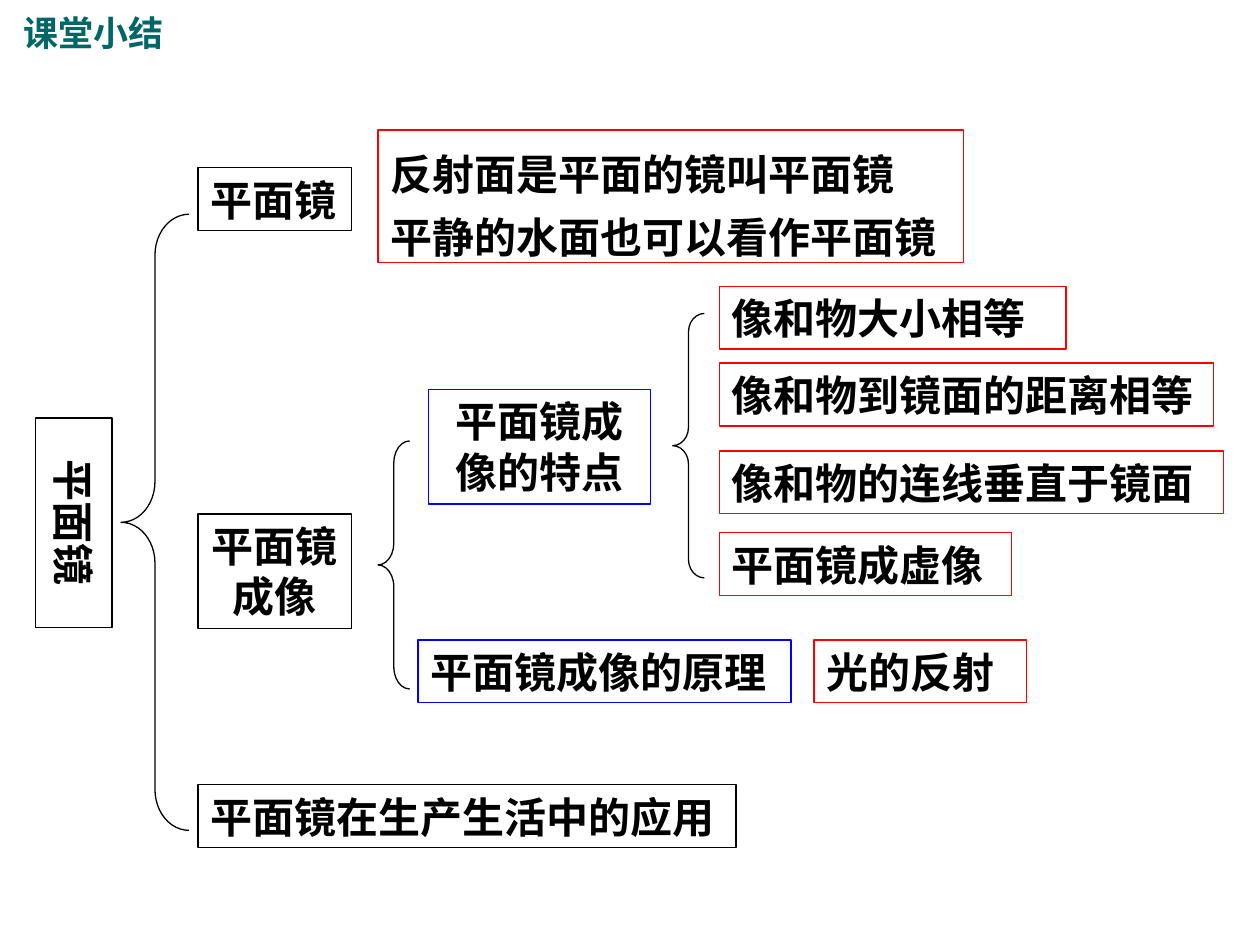
"""Build the lesson summary slide: a brace diagram about plane mirrors."""
from pptx import Presentation
from pptx.dml.color import RGBColor
from pptx.enum.shapes import MSO_SHAPE as Preset
from pptx.enum.text import MSO_ANCHOR as Anchor, MSO_AUTO_SIZE as AutoSize, PP_ALIGN as Align
from pptx.util import Cm, Pt

BLACK = RGBColor(0x00, 0x00, 0x00)
BLUE = RGBColor(0x00, 0x00, 0xFF)
RED = RGBColor(0xFF, 0x00, 0x00)
TEAL = RGBColor(0x00, 0x66, 0x66)

BRANCH_LEFT, FEATURE_LEFT = 3.99, 14.5
ONE_LINE, TWO_LINES = 1.27, 2.31
FRAME = dict(word_wrap=True, auto_size=AutoSize.SHAPE_TO_FIT_TEXT, vertical_anchor=Anchor.TOP,
             margin_left=Cm(0.25), margin_right=Cm(0.25),
             margin_top=Cm(0.13), margin_bottom=Cm(0.13))


def apply(target, values):
    for name, value in values.items():
        setattr(target, name, value)


def add_outline(preset, bounds, color):
    outline = slide.shapes.add_shape(preset, *map(Cm, bounds))
    outline.shadow.inherit = False
    outline.fill.background()
    outline.line.color.rgb = color
    outline.line.width = Pt(0.75)
    return outline


deck = Presentation()
deck.slide_width, deck.slide_height = Cm(25.4), Cm(19.05)
slide = deck.slides.add_slide(deck.slide_layouts[5])

heading = slide.shapes.title
apply(heading, dict(left=Cm(0.23), top=Cm(0.1), width=Cm(3.61), height=Cm(1.12)))
apply(heading.text_frame, FRAME)
heading.text_frame.text = "课堂小结"
heading_line = heading.text_frame.paragraphs[0]
heading_line.alignment = Align.LEFT
apply(heading_line.font, dict(name="Noto Sans CJK JP", size=Pt(20), bold=True))
heading_line.font.color.rgb = TEAL

braces = [
    ((2.44, 4.32, 1.37, 12.42), 0.6),
    ((7.62, 8.89, 0.64, 5.0), 0.69),
    ((13.56, 6.32, 0.64, 5.33), 0.58),
]
for bounds, curve in braces:
    brace = add_outline(Preset.LEFT_BRACE, bounds, BLACK)
    brace.adjustments[0] = curve
    brace.adjustments[1] = 0.5

topics = [
    ("平面镜", (0.71, 8.43, 1.55, 4.22), BLACK, "Arial", Align.CENTER),
    ("平面镜", (BRANCH_LEFT, 3.38, 3.1, ONE_LINE), BLACK, "Roboto", Align.LEFT),
    ("平面镜成像", (BRANCH_LEFT, 10.36, 3.1, TWO_LINES), BLACK, "Roboto", Align.CENTER),
    ("平面镜在生产生活中的应用", (BRANCH_LEFT, 15.82, 10.85, ONE_LINE), BLACK, "DejaVu Sans", Align.LEFT),
    ("反射面是平面的镜叫平面镜\n平静的水面也可以看作平面镜", (7.62, 2.62, 11.81, 2.67), RED, "Roboto", Align.LEFT),
    ("平面镜成像的特点", (8.64, 7.85, 4.47, TWO_LINES), BLUE, "Arial", Align.CENTER),
    ("平面镜成像的原理", (8.43, 12.9, 7.52, ONE_LINE), BLUE, "Arial", Align.LEFT),
    ("光的反射", (16.41, 12.9, 4.29, ONE_LINE), RED, "Roboto", Align.LEFT),
    ("像和物大小相等", (FEATURE_LEFT, 5.77, 6.99, ONE_LINE), RED, "Arial", Align.LEFT),
    ("像和物到镜面的距离相等", (FEATURE_LEFT, 7.32, 9.96, ONE_LINE), RED, "Arial", Align.LEFT),
    ("像和物的连线垂直于镜面", (FEATURE_LEFT, 9.09, 10.16, ONE_LINE), RED, "Arial", Align.LEFT),
    ("平面镜成虚像", (FEATURE_LEFT, 10.74, 5.89, ONE_LINE), RED, "Arial", Align.LEFT),
]
for wording, bounds, color, typeface, alignment in topics:
    topic = add_outline(Preset.RECTANGLE, bounds, color)
    apply(topic.text_frame, FRAME)
    topic.text_frame.text = wording
    if bounds[3] > bounds[2]:
        topic.text_frame._txBody.bodyPr.set("vert", "vert")
    for line in topic.text_frame.paragraphs:
        line.alignment = alignment
        line.line_spacing = 1.25 if "\n" in wording else 1.0
        apply(line.font, dict(name=typeface, size=Pt(24), bold=True))
        line.font.color.rgb = BLACK

deck.save("out.pptx")
